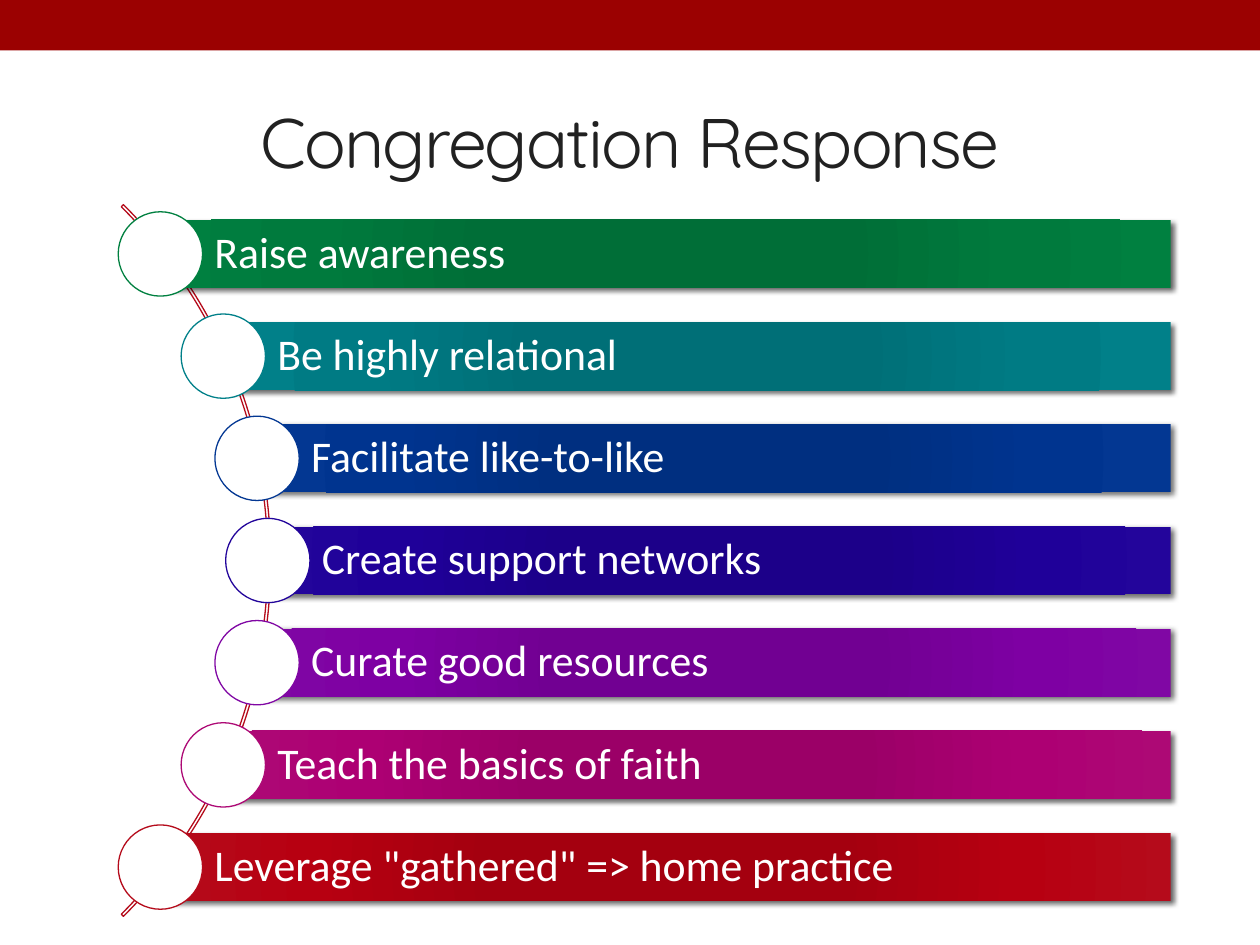
import math

from pptx import Presentation
from pptx import util as u
from pptx.dml.color import RGBColor
from pptx.enum import shapes, text
from pptx.oxml import parse_xml
from pptx.oxml import ns

TITLE = "Congregation Response"
ITEMS = [
    ("Raise awareness", "006E37", "007A3D", "008040"),
    ("Be highly relational", "006F77", "007B84", "018089"),
    ("Facilitate like-to-like", "002F80", "00348F", "033792"),
    ("Create support networks", "1C0089", "1F0099", "23059B"),
    ("Curate good resources", "710092", "7E00A3", "8007A4"),
    ("Teach the basics of faith", "9B0067", "AD0073", "AD0975"),
    ('Leverage "gathered" => home practice', "A4000F", "B70011", "B50B1B"),
]
BANNER = RGBColor(0x9B, 0x01, 0x01)
INK = RGBColor(0x21, 0x21, 0x21)
ARC_RED = RGBColor(0xB5, 0x0B, 0x1B)
WHITE = RGBColor(0xFF, 0xFF, 0xFF)

MIDDLE_Y, PITCH = 11.3, 2.06
CURVE_X, CURVE_RADIUS = -4.5, 9.9
BAR_RIGHT, BAR_HEIGHT, BALL = 23.6, 1.37, 1.7
ARC_LEFT, ARC_SIZE = -14.83, 20.29


def add_shape(page, kind, left, top, width, height, fill=None, line=None):
    shape = page.shapes.add_shape(kind, *map(u.Cm, (left, top, width, height)))
    shape.shadow.inherit = False
    if fill is None:
        shape.fill.background()
    else:
        shape.fill.solid()
        shape.fill.fore_color.rgb = fill
    if line is None:
        shape.line.fill.background()
    else:
        shape.line.color.rgb = line
        shape.line.width = u.Pt(0.75)
    return shape


def write(shape, words, font, size, color, align):
    frame = shape.text_frame
    frame.text = words
    frame.word_wrap = True
    frame.vertical_anchor = text.MSO_ANCHOR.MIDDLE
    para = frame.paragraphs[0]
    para.alignment = align
    span = para.runs[0]
    span.font.name = font
    span.font.size = u.Pt(size)
    span.font.color.rgb = color
    return para


def add_gradient(shape, inner, middle, outer):
    stops = "".join(
        f'<a:gs pos="{pos * 1000}"><a:srgbClr val="{color}"/></a:gs>'
        for pos, color in ((0, inner), (34, inner), (70, middle), (100, outer))
    )
    gradient = parse_xml(
        f'<a:gradFill {ns.nsdecls("a")} rotWithShape="1"><a:gsLst>{stops}</a:gsLst>'
        '<a:path path="circle"><a:fillToRect l="100000" t="100000" r="100000" b="100000"/>'
        "</a:path></a:gradFill>"
    )
    props = shape.element.spPr
    props.replace(props.find(ns.qn("a:noFill")), gradient)


def add_shadow(shape):
    shadow = parse_xml(
        f'<a:outerShdw {ns.nsdecls("a")} blurRad="{u.Pt(3)}" dist="{u.Pt(2)}" dir="2700000" '
        'algn="br" rotWithShape="0"><a:srgbClr val="000000"><a:alpha val="60000"/>'
        "</a:srgbClr></a:outerShdw>"
    )
    shape.element.spPr.find(ns.qn("a:effectLst")).append(shadow)


def add_item(page, index, words, inner, middle, outer):
    offset = (index - (len(ITEMS) - 1) / 2) * PITCH
    x = CURVE_X + math.sqrt(CURVE_RADIUS**2 - offset**2)
    y = MIDDLE_Y + offset

    bar = add_shape(page, shapes.MSO_SHAPE.RECTANGLE,
                    x, y - BAR_HEIGHT / 2, BAR_RIGHT - x, BAR_HEIGHT)
    add_gradient(bar, inner, middle, outer)
    add_shadow(bar)
    para = write(bar, words, "Calibri", 25, WHITE, text.PP_ALIGN.LEFT)
    para.line_spacing = 0.9
    frame = bar.text_frame
    frame.margin_left = u.Cm(1.09)
    frame.margin_top = frame.margin_right = frame.margin_bottom = u.Cm(0.18)

    add_shape(page, shapes.MSO_SHAPE.OVAL, x - BALL / 2, y - BALL / 2, BALL, BALL,
              WHITE, RGBColor.from_string(outer))


def main():
    deck = Presentation()
    deck.slide_width, deck.slide_height = u.Cm(25.4), u.Cm(19.05)
    page = deck.slides.add_slide(deck.slide_layouts[6])

    add_shape(page, shapes.MSO_SHAPE.RECTANGLE, 0, 0, 25.4, 1.02, BANNER)
    title = page.shapes.add_textbox(u.Cm(1.27), u.Cm(1.47), u.Cm(22.86), u.Cm(2.74))
    para = write(title, TITLE, "Quicksand", 40, INK, text.PP_ALIGN.CENTER)
    para.runs[0].font._element.set("spc", "-100")

    arc = add_shape(page, shapes.MSO_SHAPE.BLOCK_ARC, ARC_LEFT, MIDDLE_Y - ARC_SIZE / 2,
                    ARC_SIZE, ARC_SIZE, line=ARC_RED)
    for index, value in enumerate((189, 27, 0.003)):
        arc.adjustments[index] = value

    for index, item in enumerate(ITEMS):
        add_item(page, index, *item)

    deck.save("out.pptx")


if __name__ == "__main__":
    main()
